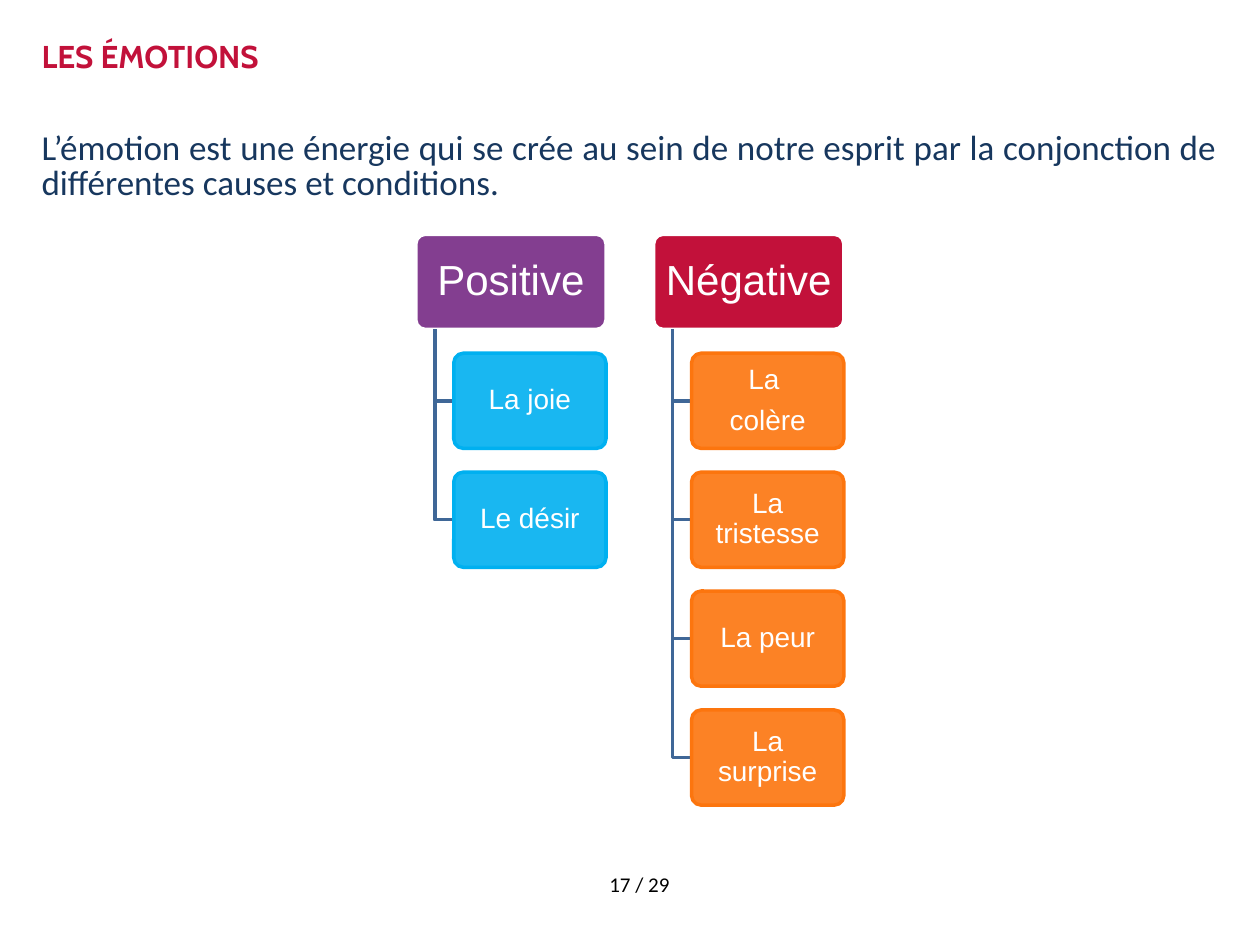
from lxml.etree import SubElement
from pptx import Presentation
from pptx.dml.color import RGBColor
from pptx.enum.shapes import MSO_SHAPE
from pptx.enum.text import MSO_ANCHOR, MSO_AUTO_SIZE, PP_ALIGN
from pptx.oxml.ns import qn
from pptx.util import Inches, Pt

# Content
TITLE = "LES ÉMOTIONS"
BODY = ("L’émotion est une énergie qui se crée au sein de notre esprit "
        "par la conjonction de différentes causes et conditions.")
GROUPS = [
    ("Positive", "purple", "cyan", ["La joie", "Le désir"]),
    ("Négative", "red", "orange",
     ["La \ncolère", "La tristesse", "La peur", "La surprise"]),
]
PAGE = "17 / 29"
HEX = {"red": "C2113A", "navy": "17375E", "purple": "833E90",
       "cyan": "00B0F0", "orange": "FC750E", "link": "3F6797",
       "white": "FFFFFF", "black": "000000"}

# Grid of the tree, in inches: all lengths follow from the head width
LEFT, TOP, WIDE = 3.3, 1.86, 1.51
HIGH = WIDE / 2
STEP = 1.25
STEM, INDENT = WIDE * 0.1, WIDE * 0.2


def color(name):
    return RGBColor.from_string(HEX[name])


def place(shape, *box):
    shape.left, shape.top, shape.width, shape.height = map(Inches, box)


def write(shape, text, font, size, tint, align, pad=(0, 0), bold=False):
    frame = shape.text_frame
    frame.text = text
    frame.word_wrap = True
    frame.auto_size = MSO_AUTO_SIZE.NONE
    frame.margin_left = frame.margin_right = Inches(pad[0])
    frame.margin_top = frame.margin_bottom = Inches(pad[1])
    for para in frame.paragraphs:
        para.alignment = align
        for run in para.runs:
            run.font.name, run.font.size = font, Pt(size)
            run.font.bold = bold
            run.font.color.rgb = color(tint)
    return frame


def card(slide, text, box, fill, line, size, pad, alpha=100):
    shape = slide.shapes.add_shape(MSO_SHAPE.ROUNDED_RECTANGLE,
                                   *map(Inches, box))
    shape.adjustments[0] = 0.1
    shape.shadow.inherit = False
    shape.fill.solid()
    shape.fill.fore_color.rgb = color(fill)
    if alpha < 100:
        tone = shape.fill._xPr.find(".//" + qn("a:srgbClr"))
        SubElement(tone, qn("a:alpha"), val=str(alpha * 1000))
    shape.line.color.rgb = color(line)
    shape.line.width = Pt(2)
    frame = write(shape, text, "Arial", size, "white", PP_ALIGN.CENTER, pad)
    frame.vertical_anchor = MSO_ANCHOR.MIDDLE
    for para in frame.paragraphs:
        para.line_spacing = 0.9
        para.space_after = Pt(size * 0.4)


def elbow(slide, x, top, end, mid):
    pen = slide.shapes.build_freeform(Inches(x), Inches(top))
    pen.add_line_segments([(Inches(x), Inches(mid)),
                           (Inches(end), Inches(mid))], close=False)
    shape = pen.convert_to_shape()
    shape.shadow.inherit = False
    shape.fill.background()
    shape.line.color.rgb = color("link")
    shape.line.width = Pt(2)


def main():
    deck = Presentation()
    deck.slide_width, deck.slide_height = Inches(10), Inches(7.5)
    slide = deck.slides.add_slide(deck.slide_layouts[1])

    # Title and definition
    title, body = slide.placeholders
    place(title, 0.33, 0.29, 9.33, 0.76)
    frame = write(title, TITLE, "Cabin", 18, "red", PP_ALIGN.LEFT, bold=True)
    frame.vertical_anchor = MSO_ANCHOR.TOP
    place(body, 0.33, 1.05, 9.33, 5.11)
    body.fill.solid()
    body.fill.fore_color.rgb = color("white")
    frame = write(body, BODY, "Calibri", 20, "navy", PP_ALIGN.JUSTIFY)
    para = frame.paragraphs[0]
    para.line_spacing, para.space_before = Pt(20), Pt(0)
    props = para._p.get_or_add_pPr()
    props.set("marL", "0")
    props.set("indent", "0")
    SubElement(props, qn("a:buNone"))

    # Two branches of emotions
    for col, (head, main_fill, tint, items) in enumerate(GROUPS):
        x = LEFT + col * WIDE * STEP
        card(slide, head, (x, TOP, WIDE, HIGH), main_fill, "white", 24,
             (0.07, 0.05))
        for row, item in enumerate(items, 1):
            y = TOP + row * HIGH * STEP
            elbow(slide, x + STEM, TOP + HIGH, x + INDENT, y + HIGH / 2)
            card(slide, item, (x + INDENT, y, WIDE - INDENT, HIGH),
                 tint, tint, 16, (0.05, 0.04), alpha=90)

    # Page number
    page = slide.shapes.add_textbox(*map(Inches, (4.38, 6.87, 1.39, 0.31)))
    write(page, PAGE, "Calibri", 12, "black", PP_ALIGN.CENTER, (0.1, 0.05))

    deck.save("out.pptx")


if __name__ == "__main__":
    main()
